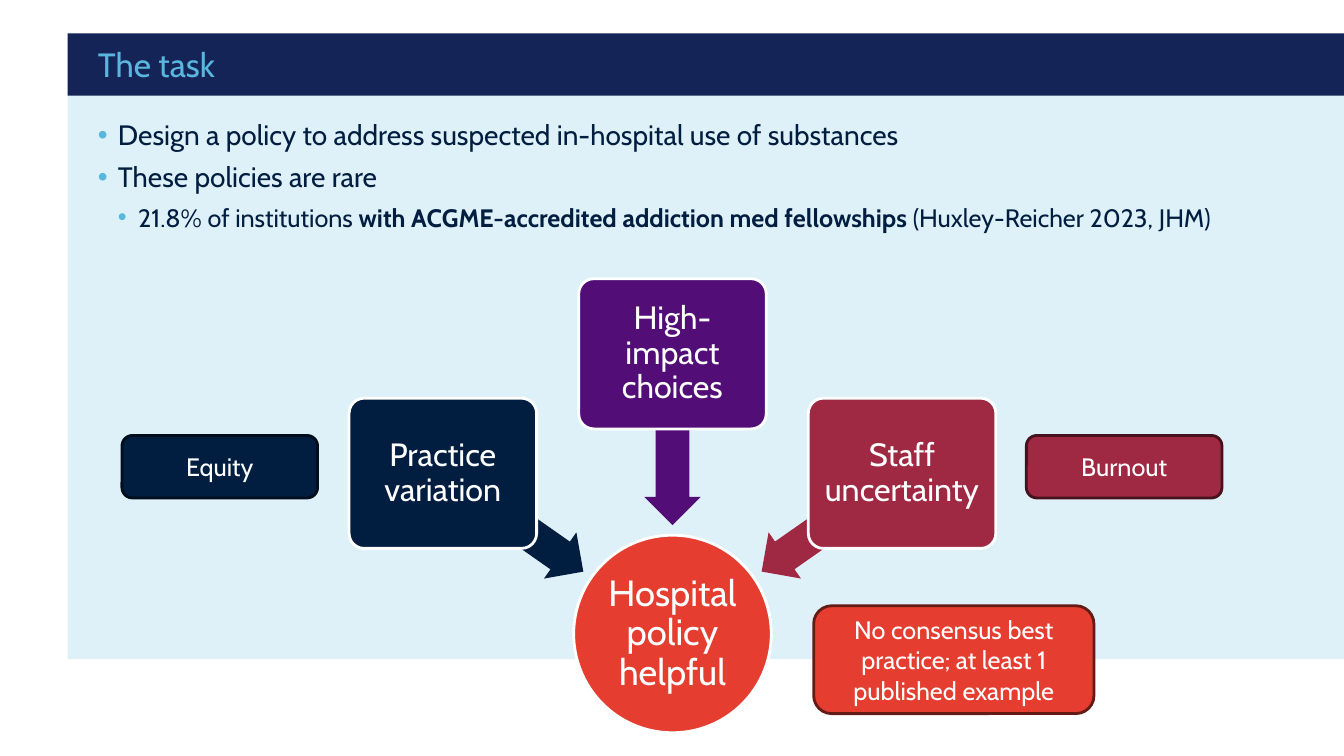
import math

from lxml import etree
from pptx import Presentation
from pptx.dml.color import RGBColor
from pptx.enum import shapes, text
from pptx.oxml import ns
from pptx.util import Inches, Pt

FONT = "Cabin"
WHITE, NAVY, PURPLE, MAROON, RED = "FFFFFF", "011E40", "520E76", "9F2843", "E53E30"
HUB_X, HUB_Y, HUB_SIZE = 6.67, 6.29, 1.96
ARROW_RADIUS, CARD_RADIUS = 1.93, 2.78

BULLETS = [
    (0, 20, [("Design a policy to address suspected in-hospital use of substances", False)]),
    (0, 20, [("These policies are rare", False)]),
    (1, 18, [
        ("21.8% of institutions ", False),
        ("with ACGME-accredited addiction med fellowships", True),
        (" (Huxley-Reicher 2023, JHM)", False),
    ]),
]
DRIVERS = [
    ("Practice variation", NAVY, 215),
    ("High-impact choices", PURPLE, 270),
    ("Staff uncertainty", MAROON, 325),
]
CALLOUTS = [
    ("Equity", NAVY, "000D1C", (1.21, 4.32, 1.94, 0.62)),
    ("Burnout", MAROON, "46121D", (10.18, 4.32, 1.94, 0.62)),
    ("No consensus best practice; at least 1 published example", RED, "641B15",
     (8.07, 6.01, 2.78, 1.07)),
]


def paint(target, color):
    """Apply a solid hex colour to a fill or font colour."""
    if hasattr(target, "solid"):
        target.solid()
        target = target.fore_color
    target.rgb = RGBColor.from_string(color)


def place(shape, left, top, width, height):
    """Move and size a shape, in inches."""
    shape.left, shape.top = Inches(left), Inches(top)
    shape.width, shape.height = Inches(width), Inches(height)


def set_margins(frame, left, top, right, bottom):
    """Set the four text margins, in inches."""
    frame.margin_left, frame.margin_top = Inches(left), Inches(top)
    frame.margin_right, frame.margin_bottom = Inches(right), Inches(bottom)


def style(paragraph, size, color):
    """Set the font of a whole paragraph."""
    paragraph.font.name = FONT
    paragraph.font.size = Pt(size)
    paint(paragraph.font.color, color)


def add_block(slide, kind, box, fill, outline=None):
    """Add a flat filled shape with an optional outline."""
    block = slide.shapes.add_shape(kind, *map(Inches, box))
    block.shadow.inherit = False
    paint(block.fill, fill)
    if outline:
        paint(block.line.fill, outline)
        block.line.width = Pt(2)
    else:
        block.line.fill.background()
    return block


def add_label(block, wording, size, margin=None, spacing=None):
    """Write centred white text in a block."""
    frame = block.text_frame
    frame.word_wrap = True
    frame.vertical_anchor = text.MSO_ANCHOR.MIDDLE
    if margin is not None:
        set_margins(frame, margin, margin, margin, margin)
    label = frame.paragraphs[0]
    label.text = wording
    label.alignment = text.PP_ALIGN.CENTER
    if spacing:
        label.line_spacing = spacing
    style(label, size, WHITE)


def add_panel(slide):
    """Lay the pale panel behind the placeholders."""
    panel = add_block(slide, shapes.MSO_SHAPE.RECTANGLE, (0.67, 0.33, 12.67, 6.21), "DEF1F9")
    slide.shapes._spTree.insert(2, panel._element)


def fill_title(title):
    """Turn the title placeholder into the dark heading bar."""
    place(title, 0.67, 0.33, 12.67, 0.62)
    paint(title.fill, "152456")
    frame = title.text_frame
    frame.auto_size = text.MSO_AUTO_SIZE.NONE
    frame.vertical_anchor = text.MSO_ANCHOR.MIDDLE
    set_margins(frame, 0.3, 0.05, 0, 0.05)
    heading = frame.paragraphs[0]
    heading.text = "The task"
    heading.alignment = text.PP_ALIGN.LEFT
    style(heading, 24, "59B7DF")


def add_bullet(paragraph, level):
    """Give a paragraph a light blue bullet and a hanging indent."""
    paragraph.level = level
    properties = paragraph._p.get_or_add_pPr()
    properties.set("marL", str(Inches(0.2 * (level + 1))))
    properties.set("indent", str(Inches(-0.2)))
    bullet_color = etree.SubElement(properties, ns.qn("a:buClr"))
    etree.SubElement(bullet_color, ns.qn("a:srgbClr"), val="58B7DD")
    etree.SubElement(properties, ns.qn("a:buChar"), char="•")


def fill_body(body):
    """Write the bullet list in the body placeholder."""
    place(body, 0.67, 1.17, 12.33, 5.37)
    frame = body.text_frame
    frame.auto_size = text.MSO_AUTO_SIZE.NONE
    set_margins(frame, 0.3, 0, 0, 0)
    for index, (level, size, parts) in enumerate(BULLETS):
        item = frame.add_paragraph() if index else frame.paragraphs[0]
        add_bullet(item, level)
        item.space_before, item.space_after = Pt(0), Pt(6)
        style(item, size, NAVY)
        for wording, bold in parts:
            run = item.add_run()
            run.text = wording
            if bold:
                run.font.bold = True


def box_around_hub(angle, radius, width, height):
    """Return the box centred at an angle and radius from the hub."""
    x = HUB_X + radius * math.cos(math.radians(angle))
    y = HUB_Y + radius * math.sin(math.radians(angle))
    return x - width / 2, y - height / 2, width, height


def add_driver(slide, wording, color, angle):
    """Add a card and its arrow pointing at the hub."""
    arrow = add_block(slide, shapes.MSO_SHAPE.LEFT_ARROW,
                      box_around_hub(angle, ARROW_RADIUS, 1.7, 0.56), color)
    arrow.adjustments[0] = 0.6
    arrow.rotation = angle
    card = add_block(slide, shapes.MSO_SHAPE.ROUNDED_RECTANGLE,
                     box_around_hub(angle, CARD_RADIUS, 1.86, 1.49), color, WHITE)
    card.adjustments[0] = 0.1
    add_label(card, wording, 23, 0.05, 0.9)


def main():
    """Build the slide and save it."""
    deck = Presentation()
    deck.slide_width, deck.slide_height = Inches(13.33), Inches(7.5)
    slide = deck.slides.add_slide(deck.slide_layouts[1])
    add_panel(slide)
    fill_title(slide.shapes.title)
    fill_body(slide.placeholders[1])
    hub = add_block(slide, shapes.MSO_SHAPE.OVAL,
                    box_around_hub(0, 0, HUB_SIZE, HUB_SIZE), RED, WHITE)
    add_label(hub, "Hospital policy helpful", 26, 0.02, 0.9)
    for driver in DRIVERS:
        add_driver(slide, *driver)
    for wording, fill, outline, box in CALLOUTS:
        callout = add_block(slide, shapes.MSO_SHAPE.ROUNDED_RECTANGLE, box, fill, outline)
        add_label(callout, wording, 18)
    deck.save("out.pptx")


if __name__ == "__main__":
    main()
